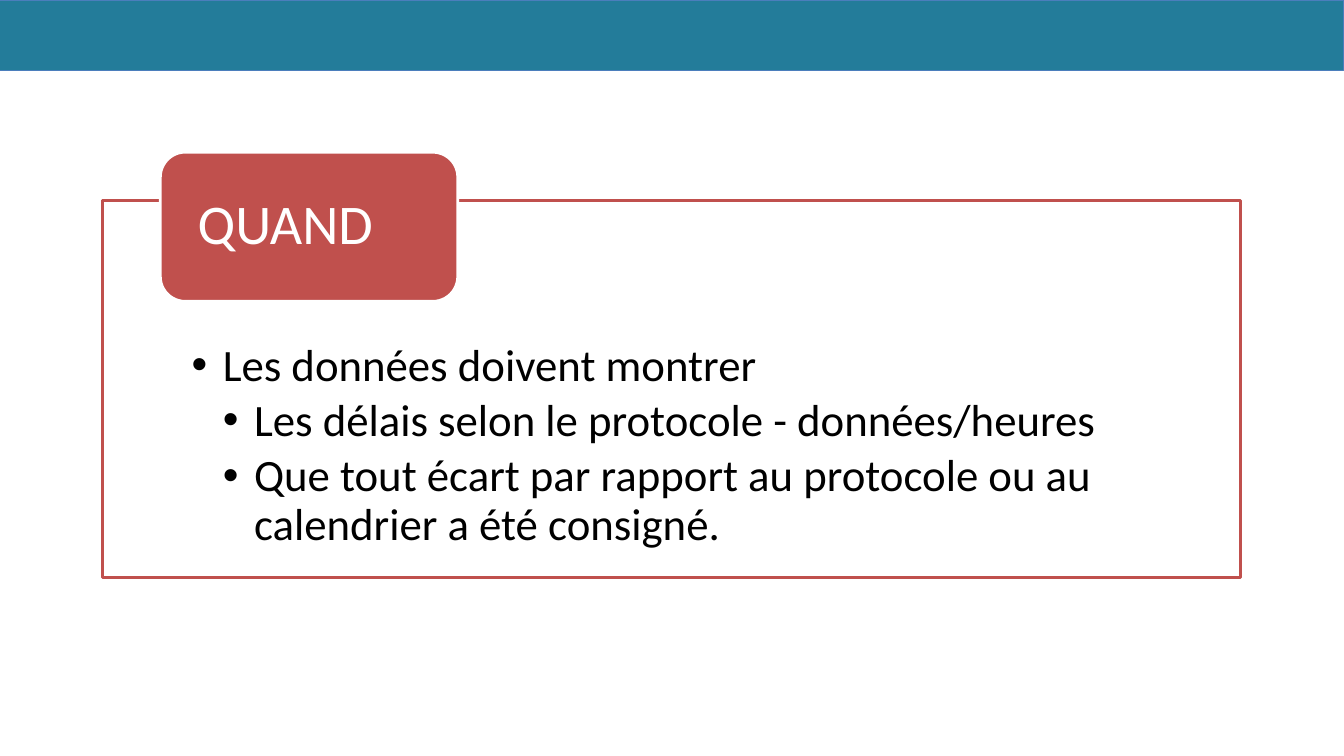
"""Build the QUAND slide: a top band, a framed bullet list and a rounded title tab."""
from dataclasses import dataclass

from lxml.etree import SubElement
from pptx import Presentation
from pptx.dml.color import RGBColor
from pptx.enum.shapes import MSO_SHAPE as Shape
from pptx.enum.text import MSO_ANCHOR as Anchor, MSO_AUTO_SIZE as AutoSize, PP_ALIGN as Align
from pptx.oxml.ns import qn
from pptx.util import Inches, Pt


@dataclass(frozen=True)
class Theme:
    band: str = "237C9A"
    band_line: str = "4B7EBC"
    accent: str = "C0504D"
    paper: str = "FFFFFF"
    ink: str = "000000"
    font: str = "Calibri"
    title_pt: int = 40
    body_pt: int = 32
    leading: float = 0.9
    indent: float = 0.31


@dataclass(frozen=True)
class Box:
    """A rectangle in percent of the slide's width and height."""
    left: float
    top: float
    width: float
    height: float


@dataclass(frozen=True)
class Panel:
    kind: Shape
    box: Box
    fill: str
    line: str
    line_pt: float


@dataclass(frozen=True)
class Bullet:
    level: int
    text: str


THEME = Theme()
WIDTH, HEIGHT = Inches(13.333), Inches(7.5)
FRAME = Box(7.65, 26.53, 84.68, 49.87)
TAB = Box(11.93, 20.13, 22.13, 19.73)
PANELS = [
    Panel(Shape.RECTANGLE, Box(0, 0, 100, 9.33), THEME.band, THEME.band_line, 0.75),
    Panel(Shape.RECTANGLE, FRAME, THEME.paper, THEME.accent, 2),
    Panel(Shape.ROUNDED_RECTANGLE, TAB, THEME.accent, THEME.paper, 2),
]
BULLETS = [
    Bullet(1, "Les données doivent montrer"),
    Bullet(2, "Les délais selon le protocole - données/heures"),
    Bullet(2, "Que tout écart par rapport au protocole ou au calendrier a été consigné."),
]


def place(box: Box) -> tuple[int, int, int, int]:
    """Turn shares of the slide into lengths."""
    return (int(WIDTH * box.left / 100), int(HEIGHT * box.top / 100),
            int(WIDTH * box.width / 100), int(HEIGHT * box.height / 100))


def draw_panel(slide, panel: Panel) -> None:
    """Draw one filled and outlined panel."""
    s = slide.shapes.add_shape(panel.kind, *place(panel.box))
    s.shadow.inherit = False
    s.fill.solid()
    s.fill.fore_color.rgb = RGBColor.from_string(panel.fill)
    s.line.color.rgb = RGBColor.from_string(panel.line)
    s.line.width = Pt(panel.line_pt)


def fit_placeholder(slide, sp, box: Box, *, insets: tuple, anchor: Anchor):
    """Move a placeholder to the front of the slide and return its text frame."""
    sp.left, sp.top, sp.width, sp.height = place(box)
    slide.shapes._spTree.append(sp._element)
    tf = sp.text_frame
    tf.word_wrap, tf.auto_size, tf.vertical_anchor = True, AutoSize.NONE, anchor
    tf.margin_left, tf.margin_top, tf.margin_right, tf.margin_bottom = map(Inches, insets)
    return tf


def write(p, text: str, *, size: int, color: str, after: float = 0, level: int = 0) -> None:
    """Write a paragraph, bulleted when it has a level."""
    p.alignment, p.line_spacing = Align.LEFT, THEME.leading
    p.space_before, p.space_after = Pt(0), Pt(after)
    if level:
        p.level = level - 1
        pPr = p._p.get_or_add_pPr()
        pPr.set("marL", str(Inches(THEME.indent * level)))
        pPr.set("indent", str(Inches(-THEME.indent)))
        SubElement(pPr, qn("a:buChar"), char="•")
    r = p.add_run()
    r.text = text
    r.font.name, r.font.size = THEME.font, Pt(size)
    r.font.color.rgb = RGBColor.from_string(color)


def main() -> None:
    """Build and save the slide."""
    prs = Presentation()
    prs.slide_width, prs.slide_height = WIDTH, HEIGHT
    slide = prs.slides.add_slide(prs.slide_layouts[1])
    title, body = slide.placeholders
    for panel in PANELS:
        draw_panel(slide, panel)

    tf = fit_placeholder(slide, title, TAB, insets=(0.37, 0, 0.37, 0), anchor=Anchor.MIDDLE)
    write(tf.paragraphs[0], "QUAND", size=THEME.title_pt, color=THEME.paper)

    tf = fit_placeholder(slide, body, FRAME, insets=(0.88, 1.41, 0.88, 0.25), anchor=Anchor.TOP)
    for i, bullet in enumerate(BULLETS):
        p = tf.add_paragraph() if i else tf.paragraphs[0]
        write(p, bullet.text, size=THEME.body_pt, color=THEME.ink,
              after=THEME.body_pt * 0.15, level=bullet.level)
    prs.save("out.pptx")


if __name__ == "__main__":
    main()
